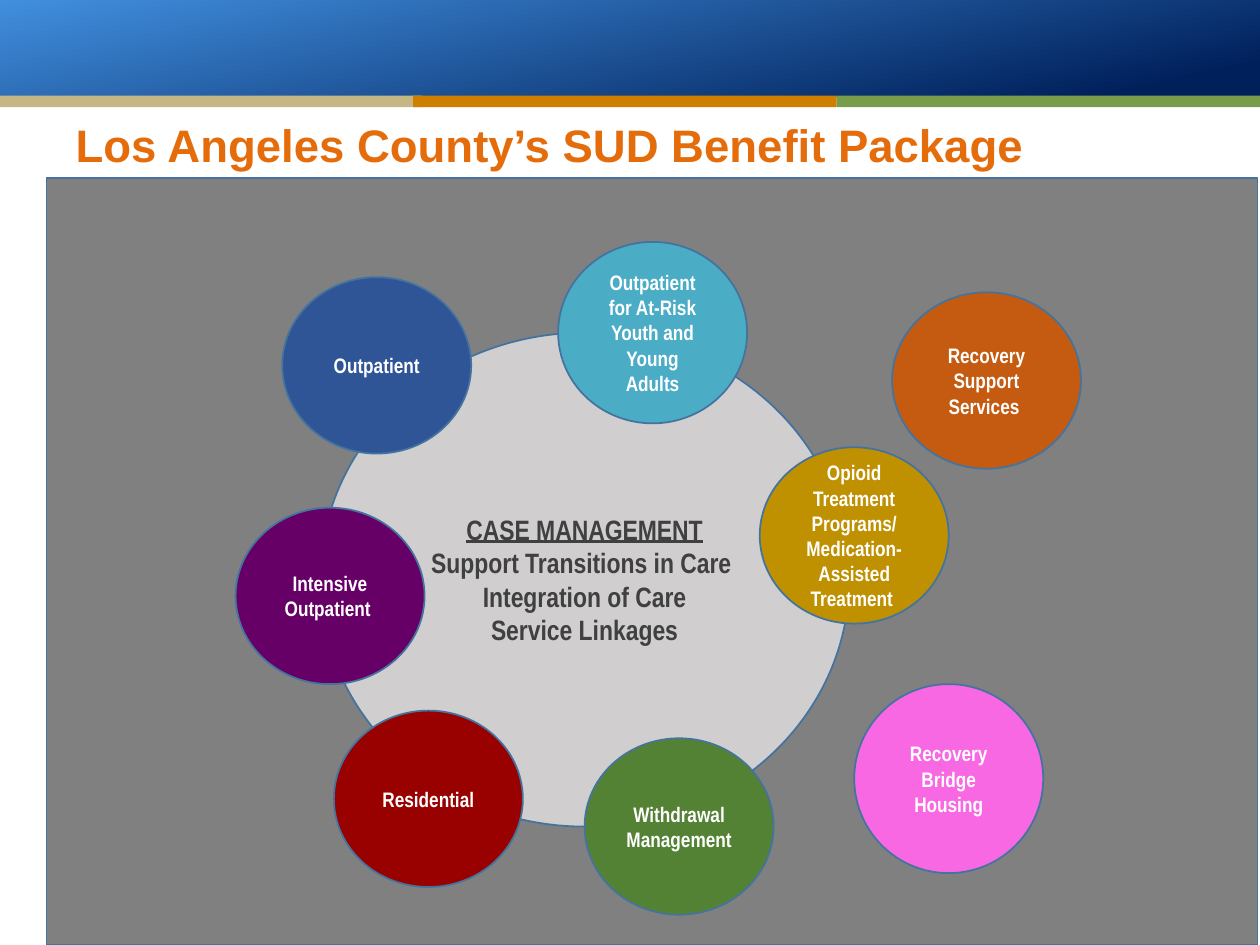
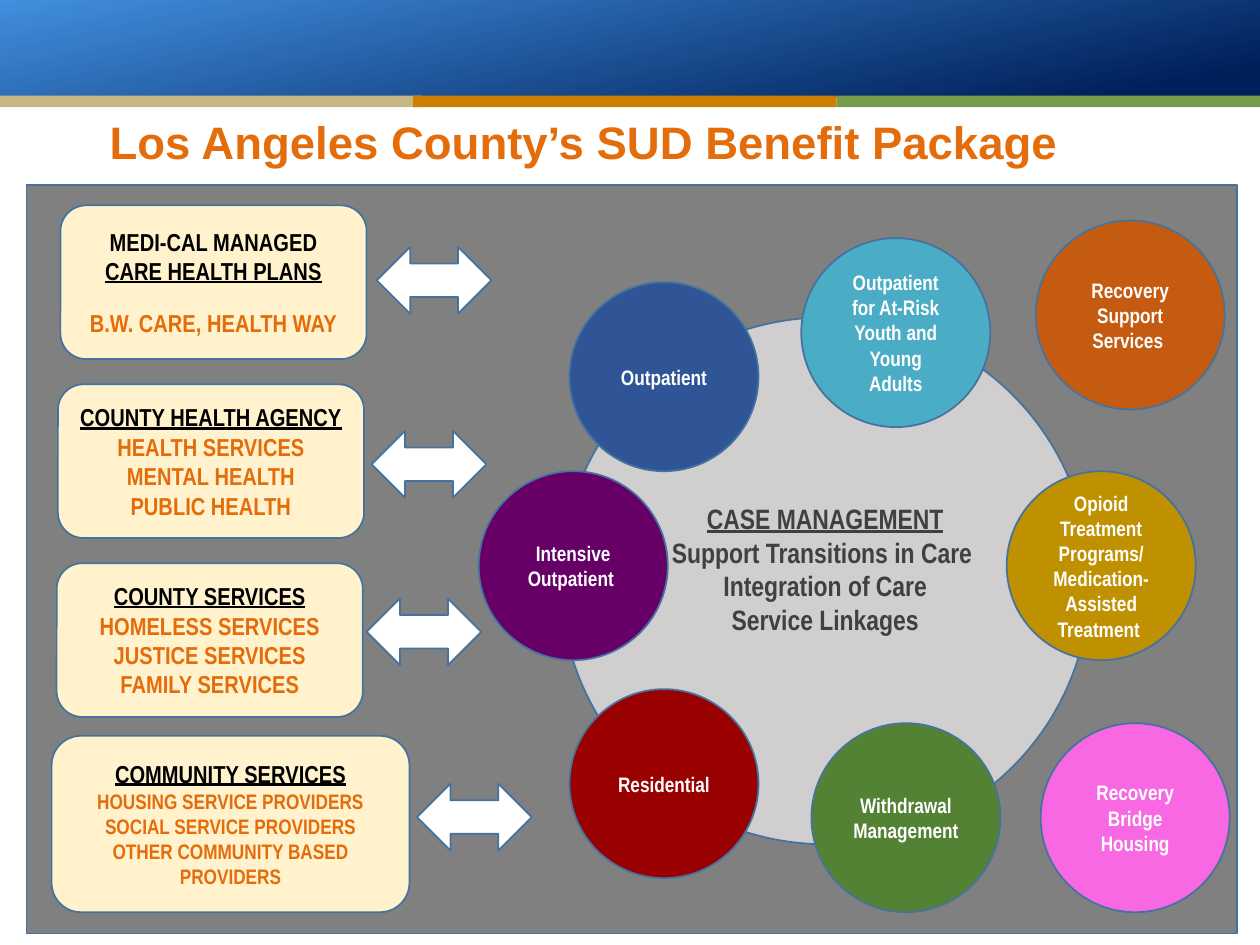
import pptx
import pptx.util
import pptx.dml.color
import pptx.enum.shapes
import pptx.enum.text
from dataclasses import dataclass

Inches = pptx.util.Inches
SHAPE = pptx.enum.shapes.MSO_SHAPE
ANCHOR = pptx.enum.text.MSO_ANCHOR
ALIGN = pptx.enum.text.PP_ALIGN


@dataclass(frozen=True)
class Theme:
    # Fonts and type sizes
    title_font: str = "Arial"
    body_font: str = "Arial Narrow"
    title_size: int = 26
    hub_size: int = 16
    partner_size: int = 14
    service_size: int = 12
    # Colours
    orange: str = "E46C0A"
    outline: str = "43739E"
    panel: str = "808080"
    hub: str = "D0CECE"
    hub_text: str = "404040"
    partner: str = "FFF2CC"
    white: str = "FFFFFF"
    black: str = "000000"
    band_dark: str = "00205B"
    band_light: str = "418FDE"
    stripes: tuple = ("C5B783", "CF7F00", "789D4A")


THEME = Theme()


@dataclass(frozen=True)
class Line:
    text: str
    size: int
    color: str
    underline: bool = False
    lead: str = ""          # plain words before an underlined part
    space_before: int = 0


TITLE = "Los Angeles County’s SUD Benefit Package"

# Service name: wording and fill
SERVICES = {
    "intensive": ("Intensive Outpatient ", "660066"),
    "recovery": ("Recovery Support Services ", "C55A11"),
    "residential": ("Residential", "990000"),
    "opioid": ("Opioid Treatment Programs/ Medication- Assisted Treatment ", "BF9000"),
    "outpatient": ("Outpatient", "2F5597"),
    "withdrawal": ("Withdrawal Management", "548235"),
    "housing": ("Recovery Bridge Housing", "F868E3"),
    "youth": ("Outpatient for At-Risk Youth and Young Adults", "4BACC6"),
}
SERVICE_WIDTH = 1.5

# Service name: left, top, height
BENEFIT_PLACES = {
    "intensive": (1.87, 4.03, 1.4),
    "recovery": (7.08, 2.32, 1.4),
    "residential": (2.65, 5.64, 1.4),
    "opioid": (6.03, 3.55, 1.4),
    "outpatient": (2.24, 2.2, 1.4),
    "withdrawal": (4.64, 5.86, 1.4),
    "housing": (6.78, 5.43, 1.5),
    "youth": (4.43, 1.92, 1.44),
}
PARTNER_PLACES = {
    "intensive": (3.8, 3.74, 1.5),
    "recovery": (8.22, 1.75, 1.5),
    "residential": (4.52, 5.47, 1.5),
    "opioid": (7.99, 3.74, 1.5),
    "outpatient": (4.52, 2.24, 1.5),
    "withdrawal": (6.44, 5.74, 1.5),
    "housing": (8.26, 5.74, 1.5),
    "youth": (6.36, 1.89, 1.5),
}


def heading(text, lead=""):
    return Line(text, THEME.partner_size, THEME.black, True, lead)


def member(text, size=THEME.partner_size, space_before=0):
    return Line(text, size, THEME.orange, space_before=space_before)


# Partner box, arrow position, lines
PARTNERS = [
    ((0.48, 1.63, 2.43, 1.22), (2.99, 1.96), [
        heading("CARE HEALTH PLANS", lead="MEDI-CAL MANAGED "),
        member("B.W. CARE, HEALTH WAY", space_before=13)]),
    ((0.46, 3.05, 2.43, 1.22), (2.95, 3.42), [
        heading("COUNTY HEALTH AGENCY"),
        member("HEALTH SERVICES MENTAL HEALTH"),
        member("PUBLIC HEALTH")]),
    ((0.45, 4.47, 2.43, 1.22), (2.91, 4.75), [
        heading("COUNTY SERVICES"),
        member("HOMELESS SERVICES JUSTICE SERVICES"),
        member("FAMILY SERVICES")]),
    ((0.41, 5.84, 2.84, 1.4), (3.31, 6.22), [
        heading("COMMUNITY SERVICES"),
        member("HOUSING SERVICE PROVIDERS", THEME.service_size),
        member("SOCIAL SERVICE PROVIDERS", THEME.service_size),
        member("OTHER COMMUNITY BASED PROVIDERS", THEME.service_size)]),
]


def rgb(value):
    return pptx.dml.color.RGBColor.from_string(value)


def set_font(font, name, size, color):
    font.name = name
    font.size = pptx.util.Pt(size)
    font.bold = True
    font.color.rgb = rgb(color)


def add_box(slide, kind, box, fill, outline=THEME.outline):
    sp = slide.shapes.add_shape(kind, *map(Inches, box))
    sp.shadow.inherit = False
    sp.fill.solid()
    sp.fill.fore_color.rgb = rgb(fill)
    if outline:
        sp.line.color.rgb = rgb(outline)
        sp.line.width = pptx.util.Pt(1)
    else:
        sp.line.fill.background()
    return sp


def write_lines(sp, lines):
    tf = sp.text_frame
    tf.word_wrap = True
    tf.vertical_anchor = ANCHOR.MIDDLE
    for i, line in enumerate(lines):
        p = tf.paragraphs[0] if i == 0 else tf.add_paragraph()
        p.alignment = ALIGN.CENTER
        if line.space_before:
            p.space_before = pptx.util.Pt(line.space_before)
        set_font(p.font, THEME.body_font, line.size, line.color)
        for text, underline in ((line.lead, False), (line.text, line.underline)):
            if text:
                r = p.add_run()
                r.text = text
                set_font(r.font, THEME.body_font, line.size, line.color)
                r.font.underline = underline
    return tf


def add_bands(slide, layout):
    """Draw the header band and stripes, then move them to the shared layout."""
    band = add_box(slide, SHAPE.RECTANGLE, (0, 0, 10.01, 0.77), THEME.band_dark, None)
    band.fill.gradient()
    band.fill.gradient_angle = 102
    stops = ((0.09, THEME.band_dark), (1, THEME.band_light))
    for stop, (position, color) in zip(band.fill.gradient_stops, stops):
        stop.position = position
        stop.color.rgb = rgb(color)
    stripes = [add_box(slide, SHAPE.RECTANGLE, (left, 0.76, 3.36, 0.09), color, None)
               for left, color in zip((-0.01, 3.28, 6.64), THEME.stripes)]
    for sp in [band] + stripes:
        layout.shapes._spTree.append(sp._element)


def add_title(slide, left, top):
    sp = slide.shapes.title
    sp.left, sp.top, sp.width, sp.height = map(Inches, (left, top, 9.36, 0.69))
    tf = sp.text_frame
    tf.text = TITLE
    tf.word_wrap = True
    tf.auto_size = pptx.enum.text.MSO_AUTO_SIZE.NONE
    tf.vertical_anchor = ANCHOR.MIDDLE
    p = tf.paragraphs[0]
    p.alignment = ALIGN.LEFT
    set_font(p.font, THEME.title_font, THEME.title_size, THEME.orange)


def add_hub(slide, box):
    sp = add_box(slide, SHAPE.OVAL, box, THEME.hub)
    texts = ("CASE MANAGEMENT", "Support Transitions in Care ",
             "Integration of Care", "Service Linkages")
    tf = write_lines(sp, [Line(text, THEME.hub_size, THEME.hub_text, i == 0)
                          for i, text in enumerate(texts)])
    tf.vertical_anchor = ANCHOR.TOP
    tf.margin_top = Inches(0.85)


def add_services(slide, places):
    for name, (left, top, height) in places.items():
        text, color = SERVICES[name]
        sp = add_box(slide, SHAPE.OVAL, (left, top, SERVICE_WIDTH, height), color)
        write_lines(sp, [Line(text, THEME.service_size, THEME.white)])


def add_partners(slide):
    for box, arrow_at, lines in PARTNERS:
        sp = add_box(slide, SHAPE.ROUNDED_RECTANGLE, box, THEME.partner)
        write_lines(sp, lines)
        add_box(slide, SHAPE.LEFT_RIGHT_ARROW, (*arrow_at, 0.91, 0.53), THEME.white)


def add_benefit_slide(prs, layout, title_at, panel, hub, places):
    slide = prs.slides.add_slide(layout)
    add_title(slide, *title_at)
    add_box(slide, SHAPE.RECTANGLE, panel, THEME.panel)
    add_hub(slide, hub)
    add_services(slide, places)
    return slide


def main():
    prs = pptx.Presentation()
    prs.slide_width, prs.slide_height = Inches(10), Inches(7.5)
    layout = prs.slide_layouts[5]

    # Benefit package
    slide = add_benefit_slide(prs, layout, (0.5, 0.8), (0.37, 1.41, 9.61, 6.09),
                              (2.54, 2.64, 4.2, 3.92), BENEFIT_PLACES)
    add_bands(slide, layout)

    # Benefit package with partner agencies
    slide = add_benefit_slide(prs, layout, (0.77, 0.78), (0.21, 1.47, 9.61, 5.94),
                              (4.45, 2.52, 4.2, 4.18), PARTNER_PLACES)
    add_partners(slide)

    prs.save("out.pptx")


if __name__ == "__main__":
    main()
